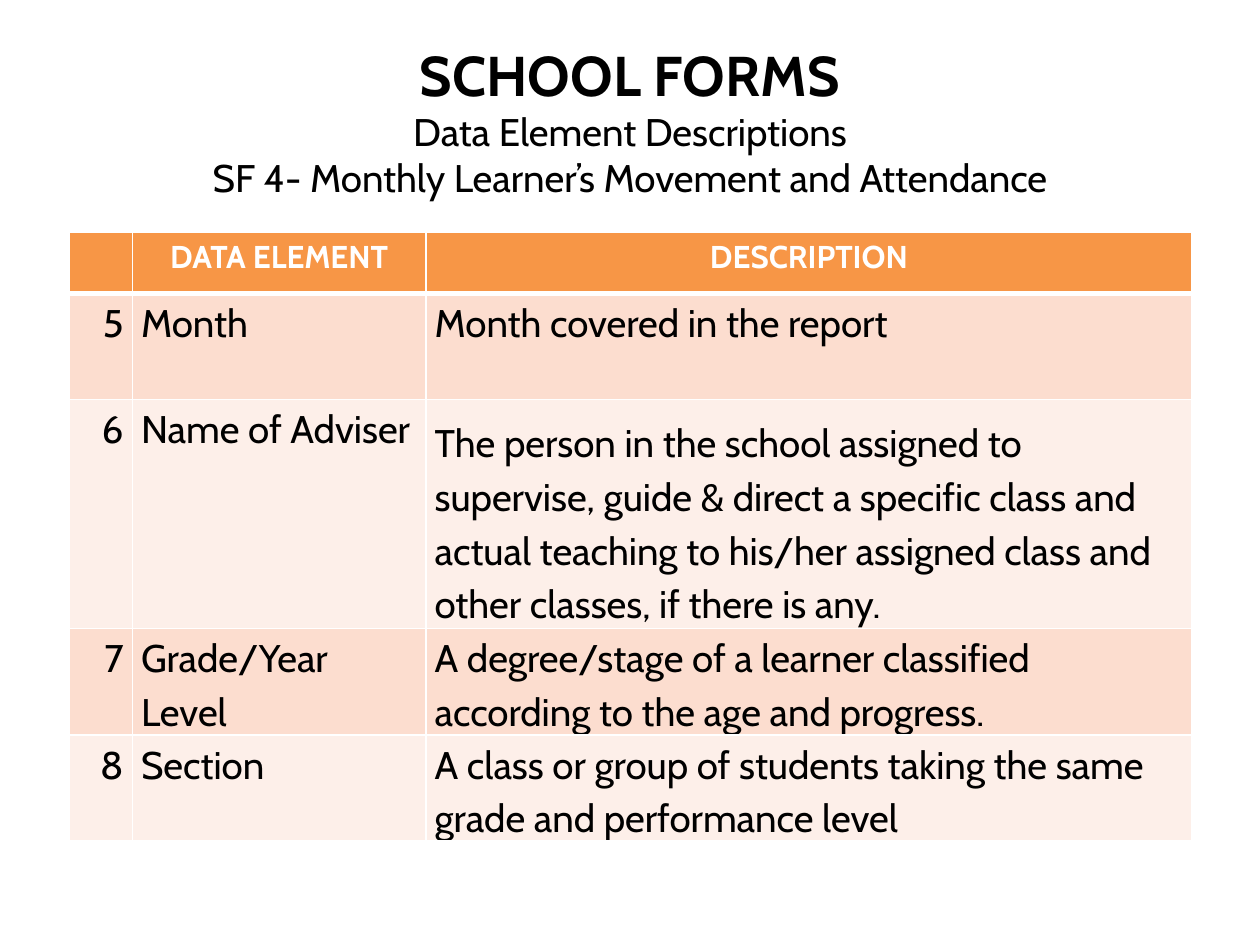
from dataclasses import dataclass

from lxml.etree import SubElement
from pptx import Presentation
from pptx.dml.color import RGBColor
from pptx.enum.text import MSO_ANCHOR, PP_ALIGN
from pptx.oxml.ns import qn
from pptx.slide import Slide
from pptx.table import Table, _Cell
from pptx.text.text import _Paragraph
from pptx.util import Inches, Pt

FONT_NAME = "Cabin"
BLACK = RGBColor(0x00, 0x00, 0x00)
WHITE = RGBColor(0xFF, 0xFF, 0xFF)
ORANGE = RGBColor(0xF7, 0x96, 0x46)
PEACH = RGBColor(0xFC, 0xDD, 0xCF)
PALE_PEACH = RGBColor(0xFD, 0xEF, 0xE9)

COLUMN_WIDTHS = (0.5, 2.33, 6.08)
ROW_HEIGHTS = (0.49, 0.84, 1.82, 0.84, 0.84)
HEADINGS = ("", "DATA ELEMENT", "DESCRIPTION")
BODY_ALIGNMENTS = (PP_ALIGN.RIGHT, PP_ALIGN.LEFT, PP_ALIGN.LEFT)


@dataclass(frozen=True)
class TextStyle:
    size: int
    color: RGBColor = BLACK
    bold: bool = False


@dataclass(frozen=True)
class DataElement:
    number: int
    name: str
    description: str
    description_anchor: MSO_ANCHOR = MSO_ANCHOR.TOP


TITLE_STYLE = TextStyle(32, bold=True)
BODY_STYLE = TextStyle(22)
HEADING_STYLE = TextStyle(18, WHITE, True)

DATA_ELEMENTS = (
    DataElement(5, "Month", "Month covered in the report"),
    DataElement(
        6,
        "Name of Adviser",
        "The person in the school assigned to supervise, guide & direct a specific "
        "class and actual teaching to his/her assigned class and other classes, "
        "if there is any.",
        MSO_ANCHOR.BOTTOM,
    ),
    DataElement(
        7,
        "Grade/Year Level",
        "A degree/stage of a learner classified according to the age and progress.",
    ),
    DataElement(
        8,
        "Section",
        "A class or group of students taking the same grade and performance level",
    ),
)


def add_run(paragraph: _Paragraph, text: str, style: TextStyle) -> None:
    run = paragraph.add_run()
    run.text = text
    run.font.name = FONT_NAME
    run.font.size = Pt(style.size)
    run.font.bold = style.bold
    run.font.color.rgb = style.color


def add_title(slide: Slide) -> None:
    title = slide.shapes.add_textbox(Inches(0.5), Inches(0.33), Inches(9), Inches(1.25))
    title.text_frame.word_wrap = True
    title.text_frame.vertical_anchor = MSO_ANCHOR.MIDDLE
    paragraph = title.text_frame.paragraphs[0]
    paragraph.alignment = PP_ALIGN.CENTER
    add_run(paragraph, "SCHOOL FORMS", TITLE_STYLE)
    for line in (
        "Data Element Descriptions",
        "SF 4- Monthly Learner’s Movement and Attendance",
    ):
        paragraph.add_line_break()
        add_run(paragraph, line, BODY_STYLE)


def set_borders(cell: _Cell, top: int, bottom: int) -> None:
    properties = cell._tc.get_or_add_tcPr()
    for side, width in (("L", 1), ("R", 1), ("T", top), ("B", bottom)):
        line = SubElement(properties, qn(f"a:ln{side}"), w=str(Pt(width)))
        fill = SubElement(line, qn("a:solidFill"))
        SubElement(fill, qn("a:srgbClr"), val=str(WHITE))


def fill_cell(
    cell: _Cell, text: str, style: TextStyle, alignment: PP_ALIGN, anchor: MSO_ANCHOR
) -> None:
    cell.vertical_anchor = anchor
    if not text:
        return
    cell.margin_left = cell.margin_right = Inches(0.07)
    cell.margin_top = cell.margin_bottom = Inches(0)
    paragraph = cell.text_frame.paragraphs[0]
    paragraph.alignment = alignment
    paragraph.line_spacing = 1.15
    add_run(paragraph, text, style)


def paint_cells(table: Table) -> None:
    for row_index, row in enumerate(table.rows):
        if row_index == 0:
            color = ORANGE
        else:
            color = PEACH if row_index % 2 else PALE_PEACH
        for cell in row.cells:
            set_borders(
                cell,
                top=3 if row_index == 1 else 1,
                bottom=3 if row_index == 0 else 1,
            )
            cell.fill.solid()
            cell.fill.fore_color.rgb = color


def add_element_table(slide: Slide) -> None:
    table = slide.shapes.add_table(
        len(ROW_HEIGHTS),
        len(COLUMN_WIDTHS),
        Inches(0.55),
        Inches(1.84),
        Inches(sum(COLUMN_WIDTHS)),
        Inches(sum(ROW_HEIGHTS)),
    ).table
    for column, width in zip(table.columns, COLUMN_WIDTHS):
        column.width = Inches(width)
    for row, height in zip(table.rows, ROW_HEIGHTS):
        row.height = Inches(height)
    paint_cells(table)

    for column_index, heading in enumerate(HEADINGS):
        fill_cell(
            table.cell(0, column_index),
            heading,
            HEADING_STYLE,
            PP_ALIGN.CENTER,
            MSO_ANCHOR.TOP,
        )
    for row_index, element in enumerate(DATA_ELEMENTS, start=1):
        texts = (str(element.number), element.name, element.description)
        anchors = (MSO_ANCHOR.TOP, MSO_ANCHOR.TOP, element.description_anchor)
        for column_index, (text, alignment, anchor) in enumerate(
            zip(texts, BODY_ALIGNMENTS, anchors)
        ):
            cell = table.cell(row_index, column_index)
            fill_cell(cell, text, BODY_STYLE, alignment, anchor)


def main() -> None:
    presentation = Presentation()
    presentation.slide_width = Inches(10)
    presentation.slide_height = Inches(7.5)
    slide = presentation.slides.add_slide(presentation.slide_layouts[6])
    add_title(slide)
    add_element_table(slide)
    presentation.save("out.pptx")


if __name__ == "__main__":
    main()
